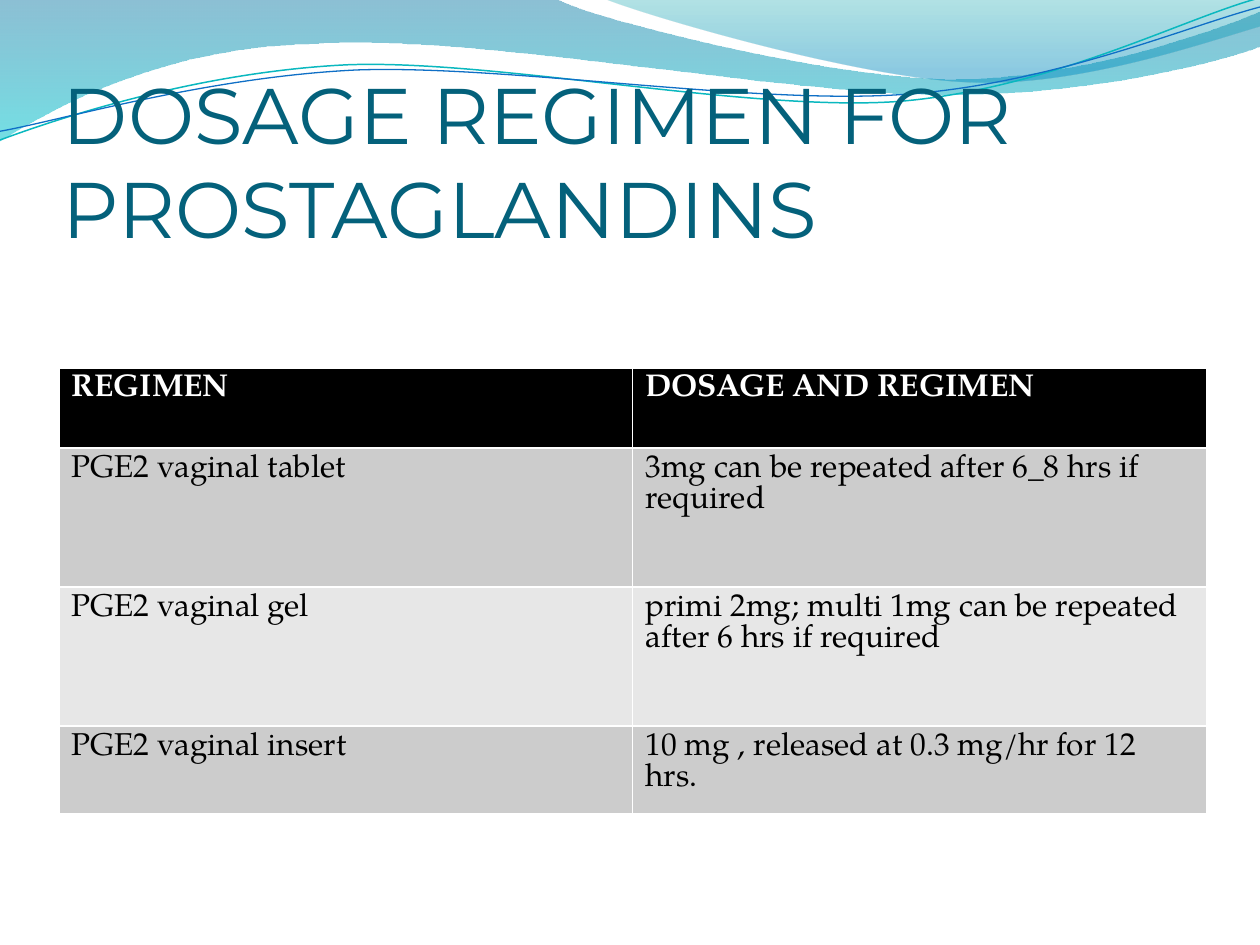
import math
import pptx
import pptx.util
import pptx.dml.color
import pptx.enum.text
import pptx.oxml
import pptx.oxml.ns

Pt = pptx.util.Pt
qn = pptx.oxml.ns.qn
BODY = "TeX Gyre Pagella"
TILT = 2.7

WAVES = [
    ([(0, 0), (317, -1), (343, 12, 478, 45, 546, 45), (614, 45, 690, 19, 720, 6.5),
      (721, 26), (708, 32, 626, 55, 537, 54), (448, 54, 275, 20, 185, 24.5),
      (93, 26, 33, 60, -1, 81)],
     [(0, "0074A1", 45), (1, "00C6CF", 55)]),
    ([(345, -1), (366, 8, 491, 45, 554, 47), (616, 50, 692, 23, 720, 15), (720, 0)],
     [(0, "00A1A9", 30), (0.8, "008BBF", 45)]),
]
LINES = [
    ([(0, 80), (35, 67, 114, 41, 199, 37), (284, 34, 427, 64, 513, 58),
      (600, 51, 675, 11, 719, -1)], (359.3, 41.4), "0AB8BF", 0.85),
    ([(0, 75), (34, 69, 118, 44, 204, 40), (290, 37, 430, 60, 516, 54),
      (602, 48, 678, 15, 720, 4)], (359.6, 42.5), "0F6FC6", 0.75),
]
ROWS = [
    ("REGIMEN", "DOSAGE AND REGIMEN"),
    ("PGE2 vaginal tablet", "3mg can be repeated after 6_8 hrs if required"),
    ("PGE2 vaginal gel", "primi 2mg; multi 1mg can be repeated after 6 hrs if required"),
    ("PGE2 vaginal insert", "10 mg , released at 0.3 mg/hr for 12 hrs."),
]
FILLS = ["000000", "CCCCCC", "E7E7E7", "CCCCCC"]
HEIGHTS = [45.8, 79.4, 79.4, 45.8]


def color(code):
    return pptx.dml.color.RGBColor.from_string(code)


def write(frame, text, size=18, font=BODY, tint="000000", bold=False):
    run = frame.paragraphs[0].add_run()
    run.text = text
    run.font.size = Pt(size)
    run.font.name = font
    run.font.bold = bold
    run.font.color.rgb = color(tint)


def pairs(part):
    return list(zip(part[::2], part[1::2]))


def turn(part, center):
    angle = math.radians(TILT)
    cos, sin = math.cos(angle), math.sin(angle)
    cx, cy = center
    spots = []
    for x, y in pairs(part):
        dx, dy = x - cx, y - cy
        spots += [cx + dx * cos - dy * sin, cy + dx * sin + dy * cos]
    return tuple(spots)


def add_path(slide, path, close):
    spots = [(Pt(x), Pt(y)) for part in path for x, y in pairs(part)]
    pen = slide.shapes.build_freeform(*spots[0])
    pen.add_line_segments(spots[1:], close=close)
    shape = pen.convert_to_shape()
    shape.shadow.inherit = False
    nodes = iter(list(shape.element.iter(qn("a:lnTo"))))
    for part in path[1:]:
        first = next(nodes)
        if len(part) == 6:
            curve = pptx.oxml.parse_xml(
                f'<a:cubicBezTo {pptx.oxml.ns.nsdecls("a")}/>')
            first.addprevious(curve)
            for node in (first, next(nodes), next(nodes)):
                curve.append(node[0])
                node.getparent().remove(node)
    return shape


def add_wave(slide, path, stops):
    shape = add_path(slide, path, True)
    shape.line.fill.background()
    shape.fill.gradient()
    shape.fill.gradient_angle = 270
    for stop, (place, code, _) in zip(shape.fill.gradient_stops, stops):
        stop.position = place
        stop.color.rgb = color(code)
    nodes = shape.element.spPr.iter(qn("a:srgbClr"))
    for node, (_, _, alpha) in zip(nodes, stops):
        node.append(pptx.oxml.parse_xml(
            f'<a:alpha {pptx.oxml.ns.nsdecls("a")} val="{alpha * 1000}"/>'))


def add_line(slide, path, center, code, width):
    shape = add_path(slide, [turn(part, center) for part in path], False)
    shape.rotation = -TILT
    shape.fill.background()
    shape.line.color.rgb = color(code)
    shape.line.width = Pt(width)


def add_title(slide, text):
    frame = slide.shapes.add_textbox(Pt(36), Pt(55.4), Pt(648), Pt(90)).text_frame
    frame.word_wrap = True
    frame.vertical_anchor = pptx.enum.text.MSO_ANCHOR.BOTTOM
    frame.margin_left = frame.margin_right = frame.margin_bottom = 0
    frame.margin_top = Pt(3.6)
    write(frame, text, size=45, font="Montserrat", tint="04617B")


def add_table(slide):
    table = slide.shapes.add_table(
        len(ROWS), 2, Pt(33.75), Pt(210.25), Pt(655.6), Pt(sum(HEIGHTS))).table
    for col in table.columns:
        col.width = Pt(327.8)
    for r, (texts, fill, height) in enumerate(zip(ROWS, FILLS, HEIGHTS)):
        table.rows[r].height = Pt(height)
        head = r == 0
        for c, text in enumerate(texts):
            cell = table.cell(r, c)
            cell.fill.solid()
            cell.fill.fore_color.rgb = color(fill)
            write(cell.text_frame, text, tint="FFFFFF" if head else "000000", bold=head)


def main():
    deck = pptx.Presentation()
    deck.slide_width, deck.slide_height = Pt(720), Pt(540)
    slide = deck.slides.add_slide(deck.slide_layouts[6])
    for wave in WAVES:
        add_wave(slide, *wave)
    for line in LINES:
        add_line(slide, *line)
    add_title(slide, "DOSAGE REGIMEN FOR PROSTAGLANDINS")
    add_table(slide)
    deck.save("out.pptx")


if __name__ == "__main__":
    main()
